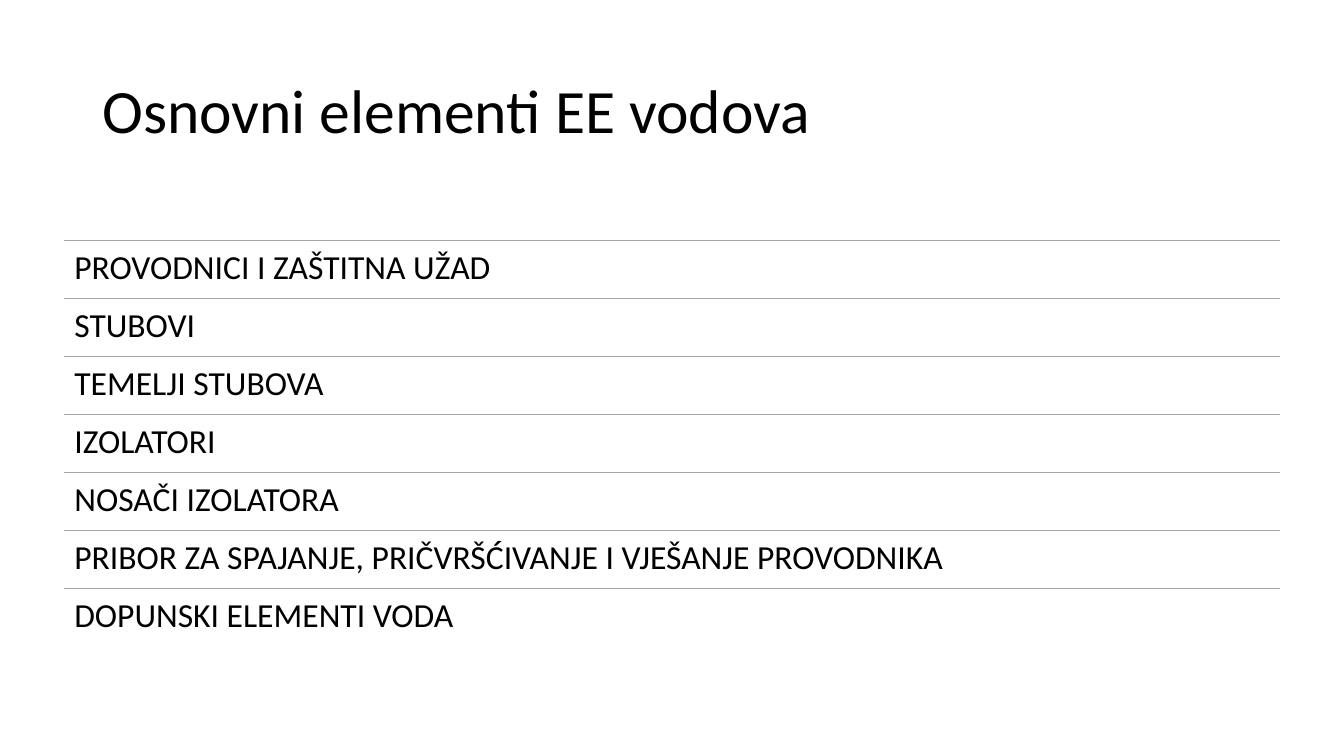
from lxml import etree
from pptx import Presentation
from pptx.dml.color import RGBColor
from pptx.enum.shapes import MSO_CONNECTOR as CONN
from pptx.enum.text import MSO_ANCHOR as ANCHOR
from pptx.oxml.ns import qn
from pptx.util import Pt

# Content
TITLE = "Osnovni elementi EE vodova"
ELEMENTS = [
    "PROVODNICI I ZAŠTITNA UŽAD",
    "STUBOVI",
    "TEMELJI STUBOVA",
    "IZOLATORI",
    "NOSAČI IZOLATORA",
    "PRIBOR ZA SPAJANJE, PRIČVRŠĆIVANJE I VJEŠANJE PROVODNIKA",
    "DOPUNSKI ELEMENTI VODA",
]

# Style and layout, in points
FONT = "Calibri"
BLACK = RGBColor(0x00, 0x00, 0x00)
GRAY = RGBColor(0xA5, 0xA5, 0xA5)
LEFT, TOP, WIDTH, ROW = 46, 172, 868.5, 41.36

prs = Presentation()
prs.slide_width, prs.slide_height = Pt(960), Pt(540)
s = prs.slides.add_slide(prs.slide_layouts[6])


def add_text(text, x, y, w, h, size, inset_x=7.2, inset_y=7.2,
             anchor=ANCHOR.TOP):
    tf = s.shapes.add_textbox(Pt(x), Pt(y), Pt(w), Pt(h)).text_frame
    tf.word_wrap = True
    tf.vertical_anchor = anchor
    tf.margin_left = tf.margin_right = Pt(inset_x)
    tf.margin_top = tf.margin_bottom = Pt(inset_y)
    p = tf.paragraphs[0]
    p.line_spacing = 0.9
    r = p.add_run()
    r.text = text
    r.font.name, r.font.size = FONT, Pt(size)
    r.font.color.rgb = BLACK


def add_rule(x, y, w):
    line = s.shapes.add_connector(CONN.STRAIGHT, Pt(x), Pt(y), Pt(x + w), Pt(y))
    line.line.color.rgb = GRAY
    line.line.width = Pt(1)
    etree.SubElement(line._element.spPr, qn("a:effectLst"))


# Title
add_text(TITLE, 66, 28.75, 828, 104.4, size=44, inset_y=3.6,
         anchor=ANCHOR.MIDDLE)

# Ruled list
for i, element in enumerate(ELEMENTS):
    y = TOP + i * ROW
    add_rule(LEFT, y, WIDTH)
    add_text(element, LEFT, y, WIDTH, ROW, size=24)

prs.save("out.pptx")
